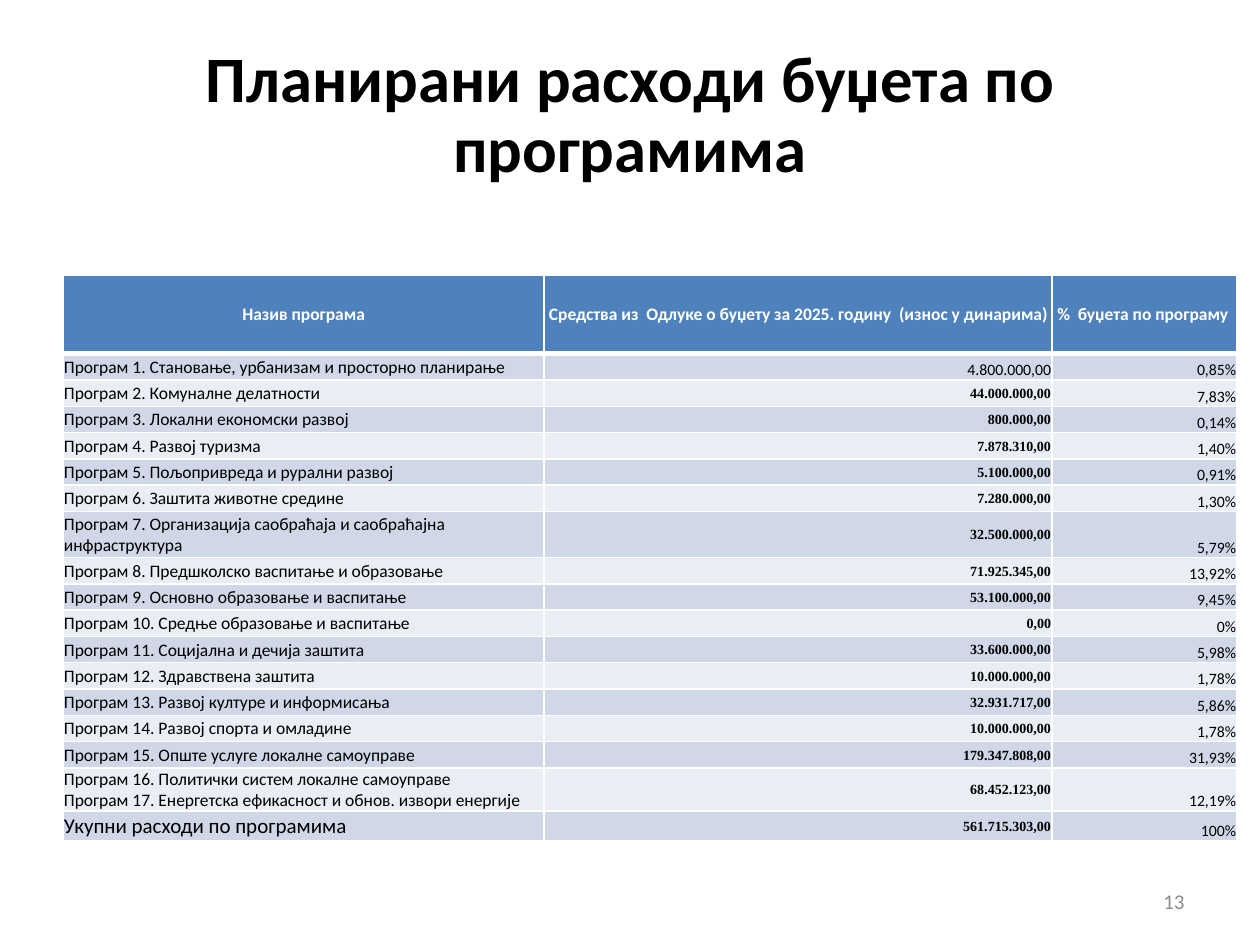
import lxml.etree
import pptx
import pptx.dml.color
import pptx.enum.text
import pptx.oxml.ns
import pptx.util

Cm = pptx.util.Cm
Pt = pptx.util.Pt
ALIGN = pptx.enum.text.PP_ALIGN
ANCHOR = pptx.enum.text.MSO_ANCHOR

COLORS = {
    "black": "000000",
    "white": "FFFFFF",
    "gray": "8C8C8C",
    "header": "4F81BD",
    "dark_band": "D0D8E8",
    "light_band": "E9EDF4",
}

FORMATS = {
    "title": {"size": Pt(37), "name": "Calibri", "bold": True},
    "number": {"size": Pt(12), "name": "Calibri", "bold": False},
    "header": {"size": Pt(10), "name": "Calibri", "bold": True},
    "program": {"size": Pt(10), "name": "Calibri", "bold": False},
    "total": {"size": Pt(12), "name": "Calibri", "bold": False},
    "amount": {"size": Pt(8), "name": "Times New Roman", "bold": True},
    "plain_amount": {"size": Pt(9), "name": "Calibri", "bold": False},
    "percent": {"size": Pt(9), "name": "Calibri", "bold": False},
}

HEADINGS = (
    "Назив програма",
    "Средства из  Одлуке о буџету за 2025. годину  (износ у динарима)",
    "%  буџета по програму ",
)

PROGRAMS = [
    ("Програм 1. Становање, урбанизам и просторно планирање", "4.800.000,00", "0,85%"),
    ("Програм 2. Комуналне делатности", "44.000.000,00", "7,83%"),
    ("Програм 3. Локални економски развој", "800.000,00", "0,14%"),
    ("Програм 4. Развој туризма", "7.878.310,00", "1,40%"),
    ("Програм 5. Пољопривреда и рурални развој", "5.100.000,00", "0,91%"),
    ("Програм 6. Заштита животне средине", "7.280.000,00", "1,30%"),
    ("Програм 7. Организација саобраћаја и саобраћајна инфраструктура", "32.500.000,00", "5,79%"),
    ("Програм 8. Предшколско васпитање и образовање", "71.925.345,00", "13,92%"),
    ("Програм 9. Основно образовање и васпитање", "53.100.000,00", "9,45%"),
    ("Програм 10. Средње образовање и васпитање", "0,00", "0%"),
    ("Програм 11. Социјална и дечија заштита", "33.600.000,00", "5,98%"),
    ("Програм 12. Здравствена заштита", "10.000.000,00", "1,78%"),
    ("Програм 13. Развој културе и информисања", "32.931.717,00", "5,86%"),
    ("Програм 14. Развој спорта и омладине", "10.000.000,00", "1,78%"),
    ("Програм 15. Опште услуге локалне самоуправе", "179.347.808,00", "31,93%"),
    (
        "Програм 16. Политички систем локалне самоуправе\n"
        "Програм 17. Енергетска ефикасност и обнов. извори енергије",
        "68.452.123,00",
        "12,19%",
    ),
    ("Укупни расходи по програмима", "561.715.303,00", "100%"),
]

COLUMN_WIDTHS = (9.7, 10.24, 3.73)
ROW_HEIGHT = 0.53
SPECIAL_HEIGHTS = {0: 1.59, 7: 0.93, 16: 0.87, 17: 0.6}


def rgb(color):
    return pptx.dml.color.RGBColor.from_string(COLORS[color])


def write_text(frame, text, style, color, align, spacing):
    for index, line in enumerate(text.split("\n")):
        para = frame.paragraphs[0] if index == 0 else frame.add_paragraph()
        for name, value in {"alignment": align, **spacing}.items():
            setattr(para, name, value)
        span = para.add_run()
        span.text = line
        for name, value in FORMATS[style].items():
            setattr(span.font, name, value)
        span.font.color.rgb = rgb(color)


def add_text(page, box, text, style, color, align, spacing):
    frame = page.shapes.add_textbox(*map(Cm, box)).text_frame
    frame.word_wrap = True
    frame.vertical_anchor = ANCHOR.MIDDLE
    write_text(frame, text, style, color, align, spacing)


def add_borders(cell, bottom_width):
    properties = cell._tc.get_or_add_tcPr()
    widths = {"lnL": 1, "lnR": 1, "lnT": 1, "lnB": bottom_width}
    for position, (side, width) in enumerate(widths.items()):
        line = lxml.etree.Element(pptx.oxml.ns.qn(f"a:{side}"), w=str(Pt(width)))
        fill = lxml.etree.SubElement(line, pptx.oxml.ns.qn("a:solidFill"))
        lxml.etree.SubElement(fill, pptx.oxml.ns.qn("a:srgbClr"), val=COLORS["white"])
        properties.insert(position, line)


def fill_cell(cell, text, style, color, fill, align, anchor, bottom_width):
    cell_format = {
        "margin_left": Cm(0.02),
        "margin_right": Cm(0.02),
        "margin_top": Cm(0.02),
        "margin_bottom": 0,
        "vertical_anchor": anchor,
    }
    for name, value in cell_format.items():
        setattr(cell, name, value)
    cell.fill.solid()
    cell.fill.fore_color.rgb = rgb(fill)
    add_borders(cell, bottom_width)
    write_text(cell.text_frame, text, style, color, align, {})


def add_budget_table(page, left, top):
    heights = [SPECIAL_HEIGHTS.get(row, ROW_HEIGHT) for row in range(len(PROGRAMS) + 1)]
    table = page.shapes.add_table(
        len(heights), len(COLUMN_WIDTHS),
        Cm(left), Cm(top), Cm(sum(COLUMN_WIDTHS)), Cm(sum(heights)),
    ).table
    for column, width in zip(table.columns, COLUMN_WIDTHS):
        column.width = Cm(width)
    for row, height in zip(table.rows, heights):
        row.height = Cm(height)

    for column, heading in enumerate(HEADINGS):
        fill_cell(table.cell(0, column), heading, "header", "white", "header",
                  ALIGN.CENTER, ANCHOR.MIDDLE, 3)

    for row, texts in enumerate(PROGRAMS, 1):
        first, last = row == 1, row == len(PROGRAMS)
        fill = "dark_band" if row % 2 else "light_band"
        looks = (
            ("total" if last else "program", ALIGN.LEFT, ANCHOR.MIDDLE),
            ("plain_amount" if first else "amount", ALIGN.RIGHT,
             ANCHOR.BOTTOM if first else ANCHOR.MIDDLE),
            ("percent", ALIGN.RIGHT, ANCHOR.BOTTOM),
        )
        for column, (text, (style, align, anchor)) in enumerate(zip(texts, looks)):
            fill_cell(table.cell(row, column), text, style, "black", fill, align, anchor, 1)


def main():
    deck = pptx.Presentation()
    deck.slide_width, deck.slide_height = Cm(25.4), Cm(19.05)
    page = deck.slides.add_slide(deck.slide_layouts[6])
    add_text(page, (1.27, 0.76, 22.86, 3.18), "Планирани расходи буџета по програмима",
             "title", "black", ALIGN.CENTER, {"line_spacing": 0.9})
    add_budget_table(page, 1.27, 5.54)
    add_text(page, (18.2, 17.65, 5.93, 1.02), "13",
             "number", "gray", ALIGN.RIGHT, {"space_after": Pt(6)})
    deck.save("out.pptx")


if __name__ == "__main__":
    main()
